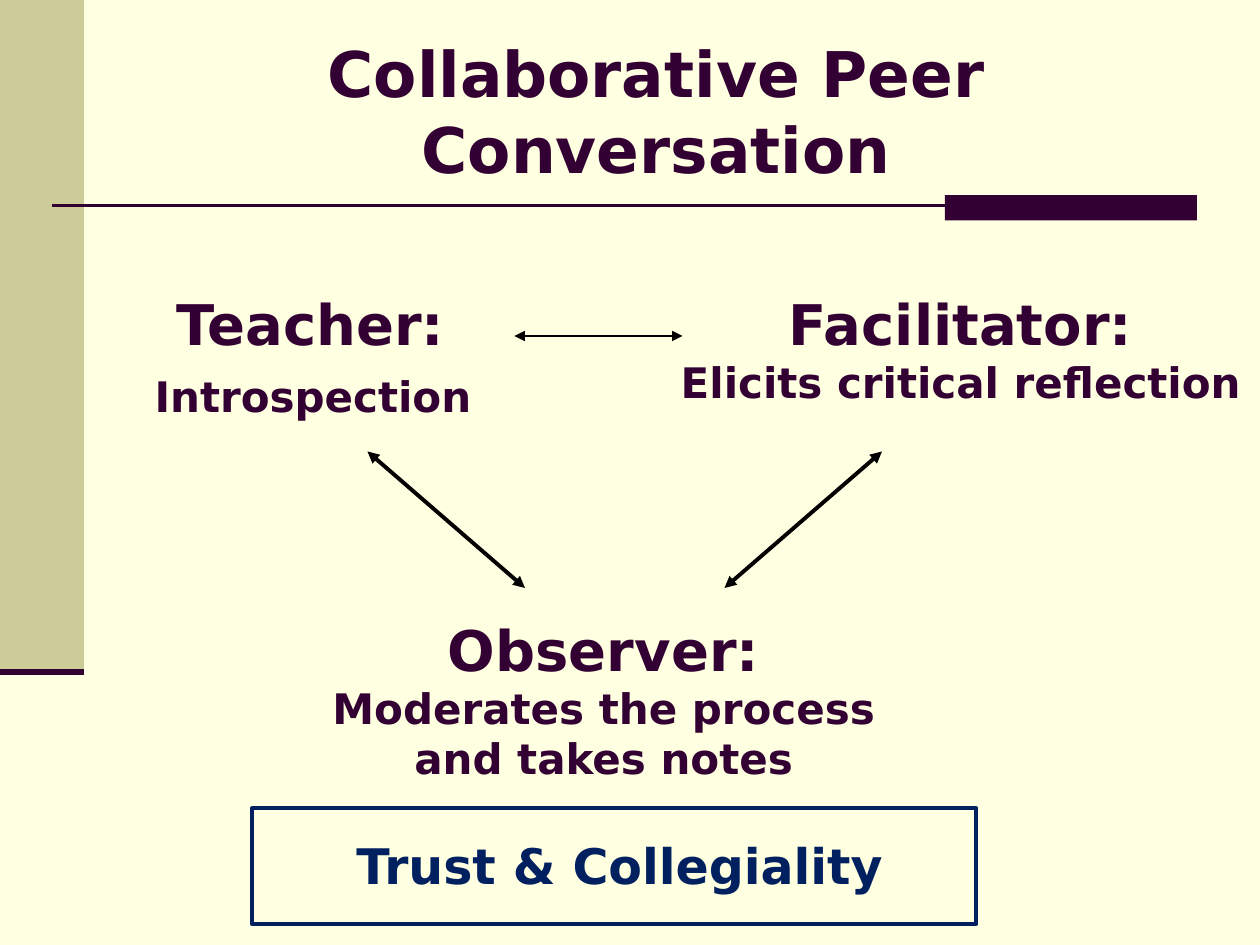
from typing import NamedTuple

from lxml.etree import SubElement
from pptx import Presentation
from pptx.dml.color import RGBColor
from pptx.enum.shapes import MSO_CONNECTOR, MSO_SHAPE
from pptx.enum.text import MSO_ANCHOR, MSO_AUTO_SIZE, PP_ALIGN
from pptx.oxml.ns import qn
from pptx.shapes.autoshape import Shape
from pptx.slide import Slide
from pptx.text.text import _Paragraph
from pptx.util import Pt

FONT = "DejaVu Sans"
CREAM, KHAKI, PLUM, NAVY, BLACK = "FFFFE1", "CCCC99", "330033", "002060", "000000"


class Box(NamedTuple):
    left: float
    top: float
    width: float
    height: float


class Role(NamedTuple):
    name: str
    task: str
    box: Box
    task_gap: float = 0


class Line(NamedTuple):
    start: tuple[float, float]
    end: tuple[float, float]
    weight: float
    color: str = BLACK
    arrows: bool = True


ROLES = [
    Role("Teacher: ", "Introspection ", Box(30, 162, 306, 84), task_gap=7.5),
    Role("Observer:", "Moderates the process and takes notes", Box(162, 348, 366, 103)),
    Role("Facilitator:", "Elicits critical reflection", Box(378, 162, 342, 84)),
]
RULES = [
    Line((30, 117.5), (684, 117.5), 1.5, PLUM, arrows=False),
    Line((0, 384), (48, 384), 3.5, PLUM, arrows=False),
]
EXCHANGES = [
    Line((210, 258), (300, 336), 2.25),
    Line((504, 258), (414, 336), 2.25),
    Line((294, 192), (390, 192), 1.5),
]


def rgb(color: str) -> RGBColor:
    return RGBColor.from_string(color)


def place(shape: Shape, box: Box) -> None:
    shape.left, shape.top, shape.width, shape.height = map(Pt, box)


def style(paragraph: _Paragraph, size: float, color: str = PLUM) -> None:
    paragraph.alignment = PP_ALIGN.CENTER
    for run in paragraph.runs:
        run.font.name = FONT
        run.font.size = Pt(size)
        run.font.bold = True
        run.font.color.rgb = rgb(color)


def add_rectangle(slide: Slide, box: Box) -> Shape:
    """Add a shadowless rectangle without fill or outline."""
    rectangle = slide.shapes.add_shape(MSO_SHAPE.RECTANGLE, *map(Pt, box))
    rectangle.shadow.inherit = False
    rectangle.fill.background()
    rectangle.line.fill.background()
    return rectangle


def add_band(slide: Slide, box: Box, color: str) -> None:
    band = add_rectangle(slide, box)
    band.fill.solid()
    band.fill.fore_color.rgb = rgb(color)


def add_line(slide: Slide, line: Line) -> None:
    connector = slide.shapes.add_connector(
        MSO_CONNECTOR.STRAIGHT, *map(Pt, line.start + line.end)
    )
    connector.line.width = Pt(line.weight)
    connector.line.color.rgb = rgb(line.color)
    if line.arrows:
        outline = connector.line._get_or_add_ln()
        for end in ("a:headEnd", "a:tailEnd"):
            SubElement(outline, qn(end), type="triangle")
    SubElement(connector._element.spPr, qn("a:effectLst"))


def add_text(slide: Slide, box: Box, text: str) -> list[_Paragraph]:
    frame = slide.shapes.add_textbox(*map(Pt, box)).text_frame
    frame.word_wrap = True
    frame.text = text
    return list(frame.paragraphs)


def add_role(slide: Slide, role: Role) -> None:
    name, task = add_text(slide, role.box, f"{role.name}\n{role.task}")
    style(name, 32)
    style(task, 24)
    task.space_before = Pt(role.task_gap)


def add_title(slide: Slide, text: str) -> None:
    title = slide.shapes.title
    place(title, Box(48, 18, 654, 90))
    frame = title.text_frame
    frame.text = text
    frame.word_wrap = True
    frame.auto_size = MSO_AUTO_SIZE.NONE
    frame.vertical_anchor = MSO_ANCHOR.MIDDLE
    style(frame.paragraphs[0], 36)


def add_foundation(slide: Slide) -> None:
    """Add the framed statement below the three roles."""
    statement = add_text(slide, Box(174, 474, 360, 41), "Trust & Collegiality")[0]
    style(statement, 28, NAVY)
    border = add_rectangle(slide, Box(144, 462, 414, 66)).line
    border.color.rgb = rgb(NAVY)
    border.width = Pt(2.25)


def main() -> None:
    presentation = Presentation()
    presentation.slide_width, presentation.slide_height = Pt(720), Pt(540)
    slide = presentation.slides.add_slide(presentation.slide_layouts[5])
    slide.background.fill.solid()
    slide.background.fill.fore_color.rgb = rgb(CREAM)

    add_title(slide, "Collaborative Peer Conversation")
    add_band(slide, Box(0, 0, 48, 384), KHAKI)
    add_band(slide, Box(540, 111.5, 144, 14.5), PLUM)
    for rule in RULES:
        add_line(slide, rule)
    for role in ROLES:
        add_role(slide, role)
    for exchange in EXCHANGES:
        add_line(slide, exchange)
    add_foundation(slide)
    presentation.save("out.pptx")


if __name__ == "__main__":
    main()
